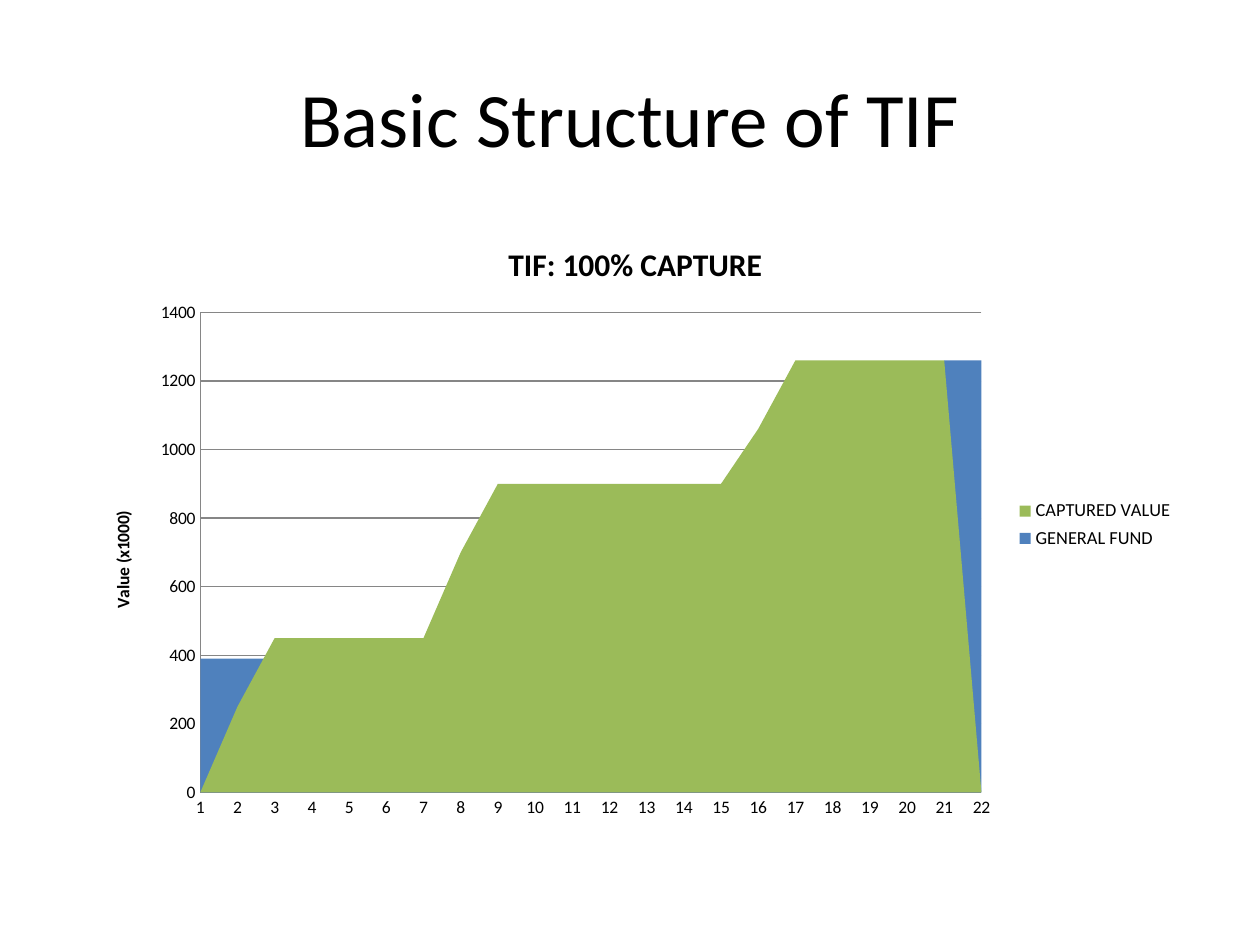
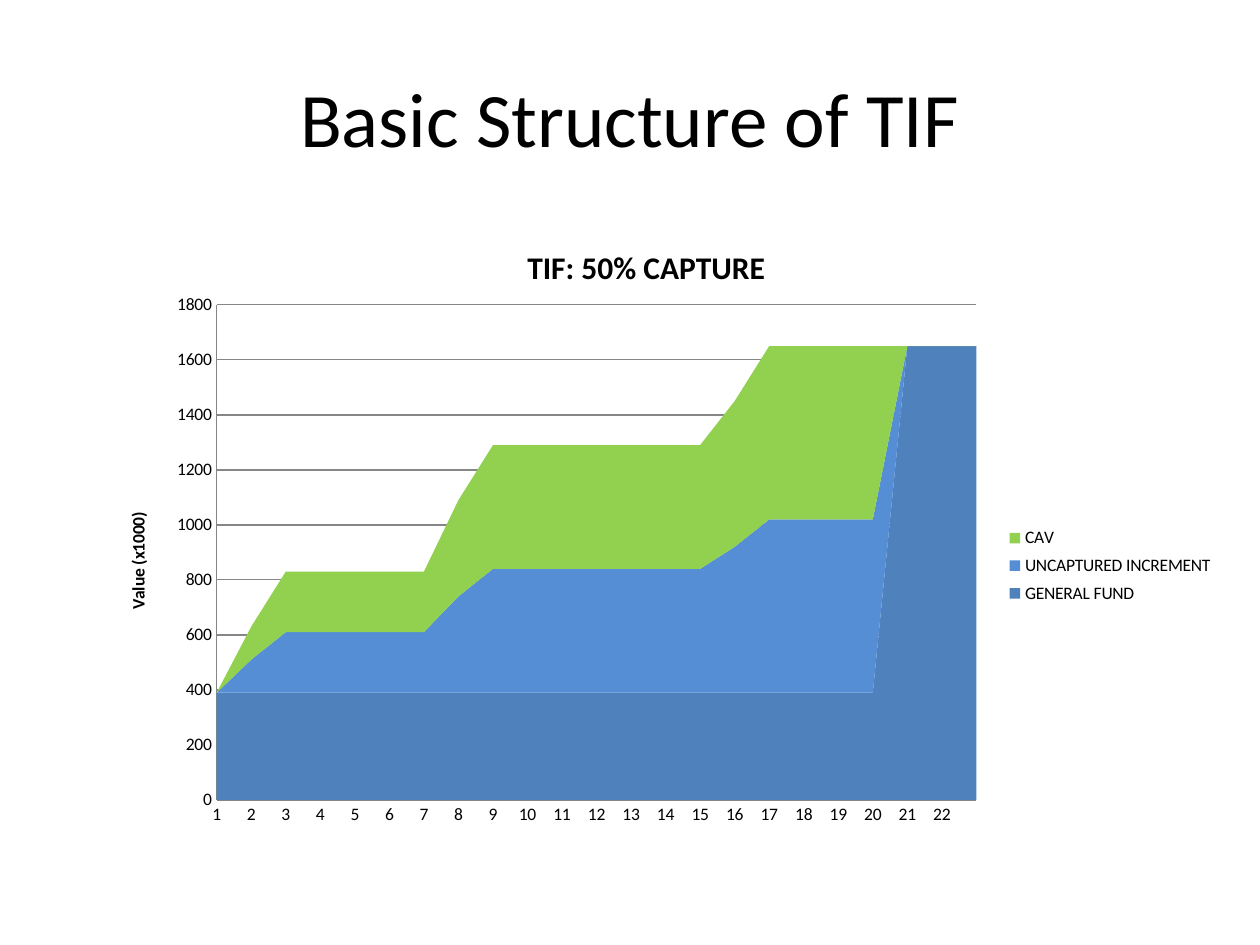
from copy import deepcopy
from dataclasses import dataclass

from pptx import Presentation
from pptx.chart.data import CategoryChartData
from pptx.dml.color import RGBColor as Rgb
from pptx.enum.chart import XL_CHART_TYPE as ChartType
from pptx.enum.chart import XL_LEGEND_POSITION as LegendPosition
from pptx.enum.chart import XL_TICK_MARK as TickMark
from pptx.enum.text import MSO_ANCHOR as Anchor
from pptx.enum.text import PP_ALIGN as Align
from pptx.oxml import parse_xml
from pptx.oxml.ns import nsdecls, qn
from pptx.util import Inches, Pt


@dataclass(frozen=True)
class Theme:
    """Fonts, type sizes and colours shared by the slides."""
    font: str = "Calibri"
    title_size: float = 44
    chart_title_size: float = 18
    label_size: float = 10
    wide_legend_size: float = 10.5
    text: str = "000000"
    grid: str = "868686"
    general_fund: str = "4F81BD"
    captured: str = "9BBB59"
    uncaptured: str = "558ED5"
    half_captured: str = "92D050"


THEME = Theme()
YEARS = [str(year) for year in range(1, 23)]
INCREMENT = [0, 250] + [450] * 5 + [700] + [900] * 7 + [1060] + [1260] * 4
HALF_INCREMENT = [round(value // 2, -1) for value in INCREMENT] + [0, 0, None]
BASE_VALUE = [390] * 20


def style_font(font, size, bold=False):
    """Apply the theme typeface and text colour."""
    font.name = THEME.font
    font.size = Pt(size)
    font.bold = bold
    font.color.rgb = Rgb.from_string(THEME.text)


def add_title(slide, text):
    """Add the centred slide title."""
    box = slide.shapes.add_textbox(Inches(0.5), Inches(0.3), Inches(9), Inches(1.25))
    frame = box.text_frame
    frame.word_wrap = True
    frame.vertical_anchor = Anchor.MIDDLE
    paragraph = frame.paragraphs[0]
    paragraph.alignment = Align.CENTER
    run = paragraph.add_run()
    run.text = text
    style_font(run.font, THEME.title_size)


def place(element, index, frame, position):
    """Fix a chart part at a left, top and optional size in inches."""
    for layout in element.findall(qn("c:layout")):
        element.remove(layout)
    sides = (frame.width, frame.height) * 2
    values = "".join(f'<c:{tag} val="{Inches(length) / side:.4f}"/>'
                     for tag, length, side in zip("xywh", position, sides))
    target = '<c:layoutTarget val="inner"/>' if element.tag == qn("c:plotArea") else ""
    element.insert(index, parse_xml(
        f'<c:layout {nsdecls("c")}><c:manualLayout>{target}<c:xMode val="edge"/>'
        f'<c:yMode val="edge"/>{values}</c:manualLayout></c:layout>'))


def write_chart_text(title, text, size, frame, position):
    """Write and place a chart title or an axis title."""
    run = title.text_frame.paragraphs[0].add_run()
    run.text = text
    style_font(run.font, size, bold=True)
    place(title.element, 1, frame, position)


def move_last_series_to_second_axis(chart):
    """Plot the last series against hidden secondary axes."""
    area = chart.element.xpath(".//c:areaChart")[0]
    second_area = deepcopy(area)
    area.remove(area.findall(qn("c:ser"))[-1])
    for series in second_area.findall(qn("c:ser"))[:-1]:
        second_area.remove(series)
    area.addnext(second_area)
    axes = chart.element.xpath(".//c:catAx | .//c:valAx")
    new_ids = {axis.find(qn("c:axId")).get("val"): str(5001 + number)
               for number, axis in enumerate(axes)}
    second_axes = [deepcopy(axis) for axis in axes]
    for axis in second_axes:
        for gridlines in axis.findall(qn("c:majorGridlines")):
            axis.remove(gridlines)
        axis.find(qn("c:delete")).set("val", "1")
    second_axes[1].find(qn("c:crosses")).set("val", "max")
    second_axes[1].find(qn("c:axPos")).set("val", "r")
    for part in [second_area, *second_axes]:
        for reference in part.findall(qn("c:axId")) + part.findall(qn("c:crossAx")):
            reference.set("val", new_ids[reference.get("val")])
    for axis in reversed(second_axes):
        axes[-1].addnext(axis)


def style_axes(chart, maximum):
    """Style the year axis and the value axis."""
    value_axis = chart.value_axis
    value_axis.minimum_scale, value_axis.maximum_scale = 0, maximum
    value_axis.major_unit = 200
    value_axis.has_major_gridlines = True
    for axis in (chart.category_axis, value_axis):
        axis.major_tick_mark = axis.minor_tick_mark = TickMark.NONE
        style_font(axis.tick_labels.font, THEME.label_size)
    for line in (chart.category_axis.format.line, value_axis.format.line,
                 value_axis.major_gridlines.format.line):
        line.color.rgb = Rgb.from_string(THEME.grid)
        line.width = Pt(0.75)
    for crossing in chart.element.xpath(".//c:valAx/c:crossBetween"):
        crossing.set("val", "midCat")


def add_axis_title(frame, position):
    """Add the upright title of the value axis."""
    title = frame.chart.value_axis.axis_title
    write_chart_text(title, "Value (x1000)", THEME.label_size, frame, position)
    body = title.element.xpath(".//a:bodyPr")[0]
    body.set("rot", "-5400000")
    body.set("vert", "horz")


def add_area_chart(slide, kind, bounds, title, years, series, maximum, places,
                   legend_size, second_axis=False):
    """Add an area chart of property value by year."""
    data = CategoryChartData()
    data.categories = years
    for name, values, _ in series:
        data.add_series(name, values)
    frame = slide.shapes.add_chart(kind, *(Inches(length) for length in bounds), data)
    chart = frame.chart
    style_font(chart.font, THEME.label_size)
    style_axes(chart, maximum)
    if second_axis:
        move_last_series_to_second_axis(chart)
    add_axis_title(frame, places["axis title"])
    for plot in chart.plots:
        plot.vary_by_categories = False
    for plotted, (_, _, color) in zip(chart.series, series):
        plotted.format.fill.solid()
        plotted.format.fill.fore_color.rgb = Rgb.from_string(color)
        plotted.format.line.fill.background()
    chart.has_title = True
    write_chart_text(chart.chart_title, title, THEME.chart_title_size, frame, places["title"])
    chart.has_legend = True
    chart.legend.position = LegendPosition.RIGHT
    chart.legend.include_in_layout = False
    style_font(chart.legend.font, legend_size)
    place(chart.element.xpath(".//c:plotArea")[0], 0, frame, places["plot"])
    if "legend" in places:
        place(chart.element.xpath(".//c:legend")[0], 1, frame, places["legend"])


def add_slide(presentation):
    """Add a blank slide with the shared title."""
    slide = presentation.slides.add_slide(presentation.slide_layouts[6])
    add_title(slide, "Basic Structure of TIF")
    return slide


def main():
    """Build and save the two slides."""
    presentation = Presentation()
    presentation.slide_width, presentation.slide_height = Inches(10), Inches(7.5)
    add_area_chart(
        add_slide(presentation), ChartType.AREA, (0.67, 1.75, 8.75, 4.83),
        "TIF: 100% CAPTURE", YEARS,
        [("CAPTURED VALUE", INCREMENT + [1260, None], THEME.captured),
         ("GENERAL FUND", BASE_VALUE + [1260] * 2, THEME.general_fund)],
        1400,
        {"title": (3.32, 0.13), "axis title": (0.19, 2.28),
         "plot": (0.92, 0.73, 6.2, 3.81)},
        THEME.wide_legend_size, second_axis=True)
    add_area_chart(
        add_slide(presentation), ChartType.AREA_STACKED, (0.5, 1.75, 9.25, 4.95),
        "TIF: 50% CAPTURE", YEARS + [""],
        [("GENERAL FUND", BASE_VALUE + [1650] * 3, THEME.general_fund),
         ("UNCAPTURED INCREMENT", HALF_INCREMENT, THEME.uncaptured),
         ("CAV", HALF_INCREMENT, THEME.half_captured)],
        1800,
        {"title": (3.64, 0.15), "axis title": (0.48, 2.29),
         "plot": (1.22, 0.67, 6.03, 3.93), "legend": (7.46, 2.38, 1.7, 0.72)},
        THEME.label_size)
    presentation.save("out.pptx")


if __name__ == "__main__":
    main()
